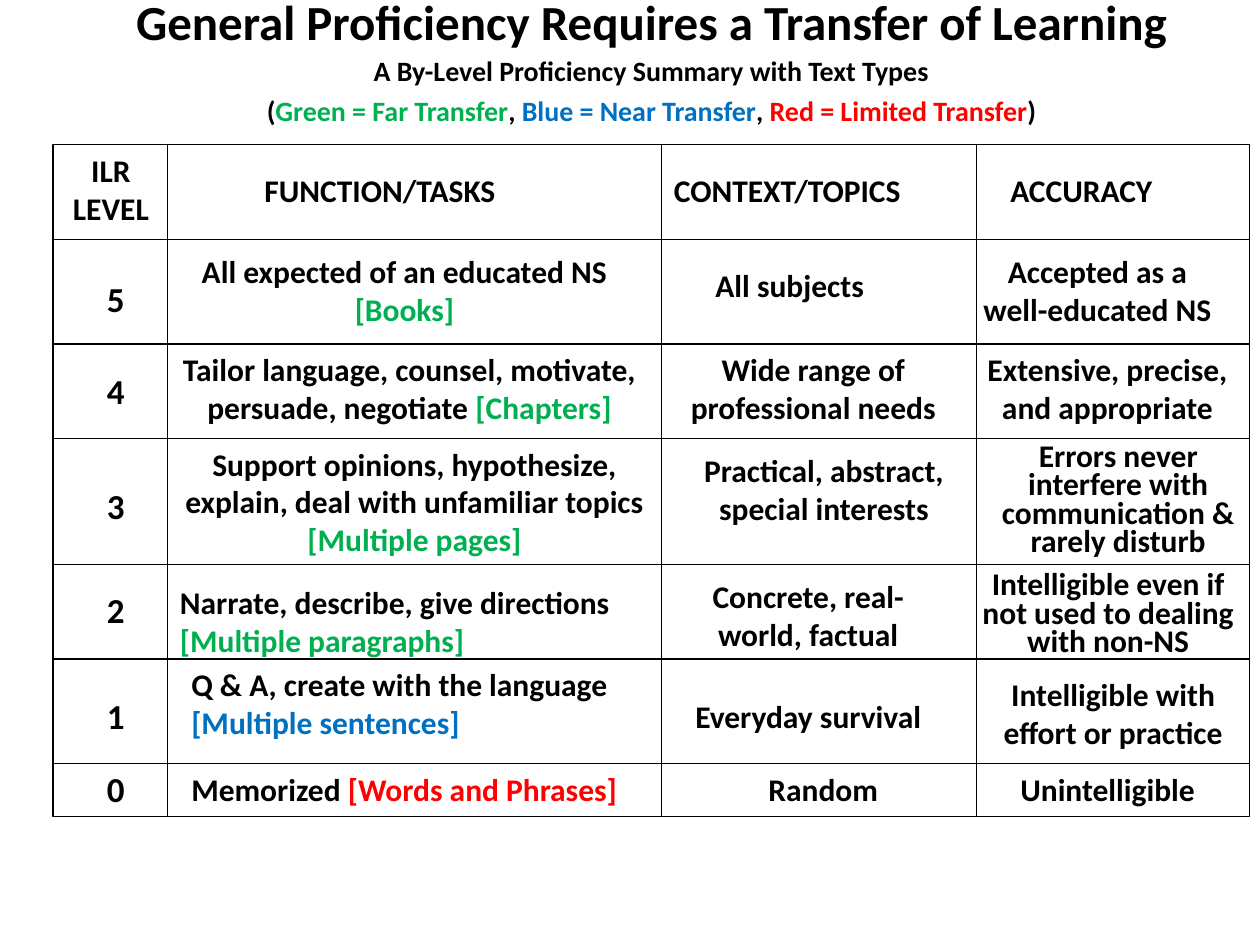
"""Build a slide summarising proficiency levels by function, context and accuracy."""
import lxml.etree
import pptx
import pptx.dml.color
import pptx.enum.shapes
import pptx.enum.text
import pptx.oxml.ns
import pptx.util
from pptx.util import Inches

BLACK = pptx.dml.color.RGBColor(0x00, 0x00, 0x00)
GREEN = pptx.dml.color.RGBColor(0x00, 0xB0, 0x50)
BLUE = pptx.dml.color.RGBColor(0x00, 0x70, 0xC0)
RED = pptx.dml.color.RGBColor(0xFF, 0x00, 0x00)
LEFT = pptx.enum.text.PP_ALIGN.LEFT
CENTER = pptx.enum.text.PP_ALIGN.CENTER

GRID_LEFT, GRID_TOP, GRID_RIGHT, GRID_BOTTOM = 0.42, 1.15, 9.92, 6.48
ROW_LINES = [1.9, 2.73, 3.48, 4.48, 5.23, 6.06]
COLUMN_LINES = [1.33, 5.25, 7.75]

presentation = pptx.Presentation()
presentation.slide_width = Inches(10)
presentation.slide_height = Inches(7.5)
slide = presentation.slides.add_slide(presentation.slide_layouts[6])


def add_text_box(left, top, width, height):
    box = slide.shapes.add_textbox(Inches(left), Inches(top), Inches(width), Inches(height))
    box.text_frame.word_wrap = True
    return box.text_frame


def fill_paragraph(paragraph, runs, size, alignment, line_spacing=1.0):
    paragraph.alignment = alignment
    paragraph.line_spacing = line_spacing
    for text, color in runs:
        run = paragraph.add_run()
        run.text = text
        run.font.name = "Calibri"
        run.font.size = pptx.util.Pt(size)
        run.font.bold = True
        run.font.color.rgb = color


heading = add_text_box(0.42, 0.05, 9.5, 1.05)
legend = [
    ("(", BLACK), ("Green = Far Transfer", GREEN), (", ", BLACK),
    ("Blue = Near Transfer", BLUE), (",", BLACK),
    (" Red = Limited Transfer", RED), (")", BLACK),
]
fill_paragraph(heading.paragraphs[0],
               [("General Proficiency Requires a Transfer of Learning", BLACK)], 28, CENTER, 0.6)
for runs in ([("A By-Level Proficiency Summary with Text Types", BLACK)], legend):
    paragraph = heading.add_paragraph()
    paragraph.space_before = pptx.util.Pt(8)
    fill_paragraph(paragraph, runs, 16, CENTER, 0.75)

frame = slide.shapes.add_shape(
    pptx.enum.shapes.MSO_SHAPE.RECTANGLE, Inches(GRID_LEFT), Inches(GRID_TOP),
    Inches(GRID_RIGHT - GRID_LEFT), Inches(GRID_BOTTOM - GRID_TOP))
frame.shadow.inherit = False
frame.fill.background()
frame.line.color.rgb = BLACK
frame.line.width = pptx.util.Pt(0.75)

grid_lines = [(GRID_LEFT, y, GRID_RIGHT, y) for y in ROW_LINES]
grid_lines += [(x, GRID_TOP, x, GRID_BOTTOM) for x in COLUMN_LINES]
for ends in grid_lines:
    line = slide.shapes.add_connector(
        pptx.enum.shapes.MSO_CONNECTOR.STRAIGHT, *[Inches(value) for value in ends])
    line.line.color.rgb = BLACK
    line.line.width = pptx.util.Pt(0.75)
    properties = line._element.find(pptx.oxml.ns.qn("p:spPr"))
    lxml.etree.SubElement(properties, pptx.oxml.ns.qn("a:effectLst"))

for level, top in zip("543210", [2.15, 2.88, 3.8, 4.62, 5.46, 6.04]):
    number = add_text_box(0.75, top, 0.5, 0.43)
    fill_paragraph(number.paragraphs[0], [(level, BLACK)], 20, LEFT)

cells = [
    (0.42, 1.15, 0.92, 0.7, CENTER, 1.0, [("ILR LEVEL", BLACK)]),
    (2, 1.31, 2.92, 0.4, LEFT, 1.0, [("FUNCTION/TASKS", BLACK)]),
    (5.25, 1.31, 2.83, 0.4, LEFT, 1.0, [("CONTEXT/TOPICS", BLACK)]),
    (7.92, 1.31, 2, 0.4, LEFT, 1.0, [("ACCURACY", BLACK)]),
    (1.42, 1.95, 3.58, 0.7, CENTER, 1.0,
     [("All expected of an educated NS ", BLACK), ("[Books]", GREEN)]),
    (5.58, 2.06, 1.83, 0.4, LEFT, 1.0, [("All subjects", BLACK)]),
    (7.67, 1.95, 2.08, 0.7, CENTER, 1.0, [("Accepted as a well-educated NS", BLACK)]),
    (1.25, 2.73, 4, 0.7, CENTER, 1.0,
     [("Tailor language, counsel, motivate, persuade, negotiate ", BLACK), ("[Chapters]", GREEN)]),
    (5.33, 2.73, 2.25, 0.7, CENTER, 1.0, [("Wide range of professional needs", BLACK)]),
    (7.58, 2.73, 2.42, 0.7, CENTER, 1.0, [("Extensive, precise, and appropriate", BLACK)]),
    (1.25, 3.48, 4.08, 1, CENTER, 1.0,
     [("Support opinions, hypothesize, explain, deal with unfamiliar topics ", BLACK),
      ("[Multiple pages]", GREEN)]),
    (5.33, 3.53, 2.42, 0.7, CENTER, 1.0, [("Practical, abstract, special interests", BLACK)]),
    (7.75, 3.48, 2.25, 1, CENTER, 0.75,
     [("Errors never interfere with communication & rarely disturb", BLACK)]),
    (1.33, 4.58, 3.83, 0.7, LEFT, 1.0,
     [("Narrate, describe, give directions ", BLACK), ("[Multiple paragraphs]", GREEN)]),
    (5.33, 4.53, 2.17, 0.7, CENTER, 1.0, [("Concrete, real-world, factual", BLACK)]),
    (7.67, 4.5, 2.25, 0.78, CENTER, 0.75,
     [("Intelligible even if not used to dealing with non-NS", BLACK)]),
    (1.42, 5.23, 3.83, 0.7, LEFT, 1.0,
     [("Q & A, create with the language ", BLACK), ("[Multiple sentences]", BLUE)]),
    (5.42, 5.48, 2.5, 0.4, LEFT, 1.0, [("Everyday survival", BLACK)]),
    (7.67, 5.31, 2.33, 0.7, CENTER, 1.0, [("Intelligible with effort or practice", BLACK)]),
    (1.42, 6.06, 3.83, 0.85, LEFT, 1.0,
     [("Memorized ", BLACK), ("[Words and Phrases]", RED)]),
    (6, 6.06, 1.25, 0.4, LEFT, 1.0, [("Random", BLACK)]),
    (8, 6.06, 1.83, 0.4, LEFT, 1.0, [("Unintelligible", BLACK)]),
]
for left, top, width, height, alignment, line_spacing, runs in cells:
    cell = add_text_box(left, top, width, height)
    fill_paragraph(cell.paragraphs[0], runs, 18, alignment, line_spacing)

presentation.save("out.pptx")
